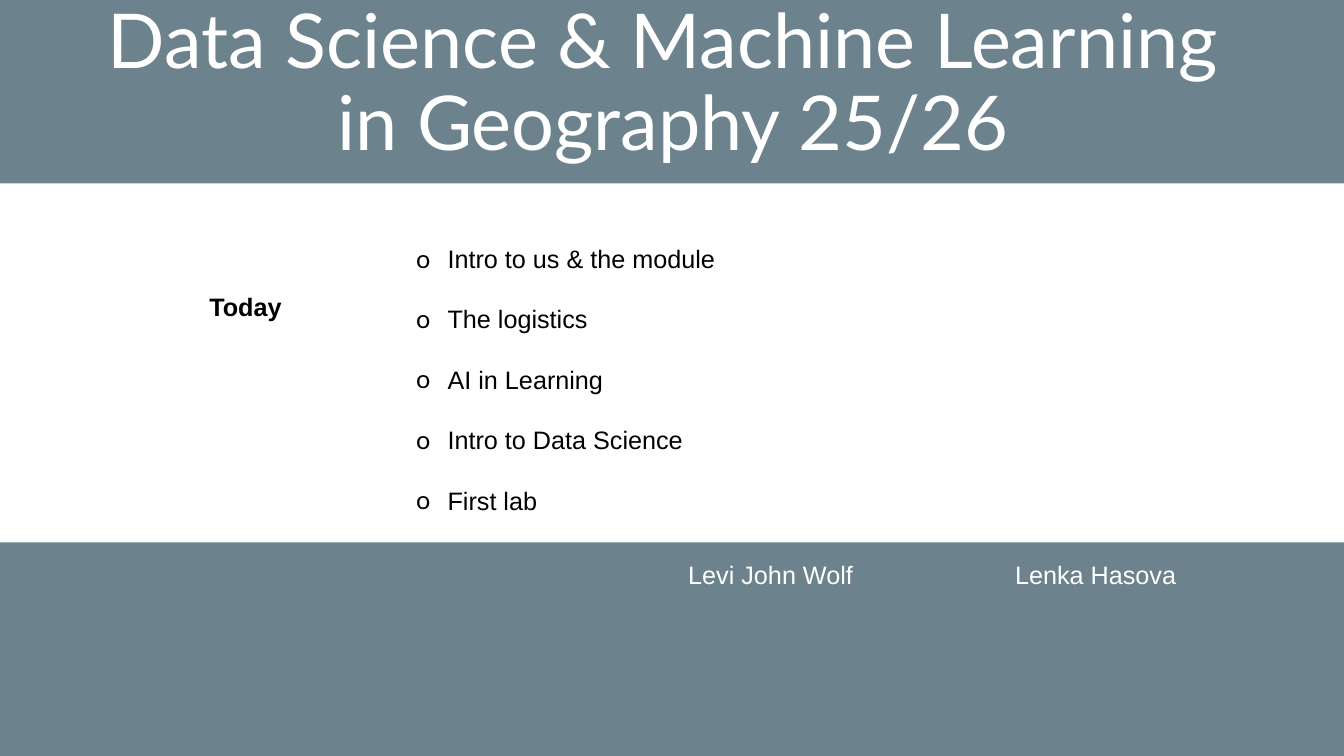
"""Build the opening slide of a data science module, with today's agenda."""
from lxml.etree import SubElement
from pptx import Presentation
from pptx.dml.color import RGBColor
from pptx.enum.shapes import MSO_SHAPE
from pptx.enum.text import MSO_ANCHOR, MSO_AUTO_SIZE, PP_ALIGN
from pptx.oxml.ns import qn
from pptx.util import Pt

NAVY = RGBColor(0x0B, 0x30, 0x41)
WHITE = RGBColor(0xFF, 0xFF, 0xFF)
BLACK = RGBColor(0x00, 0x00, 0x00)


def place(shape, left, top, width, height):
    shape.left, shape.top = Pt(left), Pt(top)
    shape.width, shape.height = Pt(width), Pt(height)


def add_span(para, text, font, size, color, bold=False):
    span = para.add_run()
    span.text = text
    span.font.name = font
    span.font.size = Pt(size)
    span.font.color.rgb = color
    span.font.bold = bold


deck = Presentation()
deck.slide_width, deck.slide_height = Pt(960), Pt(540)
page = deck.slides.add_slide(deck.slide_layouts[0])
title, agenda = page.placeholders

for position, (left, top, height) in enumerate([(-36, 387.5, 198.5), (-42.5, -9.5, 140.5)]):
    band = page.shapes.add_shape(
        MSO_SHAPE.RECTANGLE, Pt(left), Pt(top), Pt(1040.5), Pt(height))
    band.shadow.inherit = False
    band.line.fill.background()
    band.fill.solid()
    band.fill.fore_color.rgb = NAVY
    color = band.fill._xPr.find(qn("a:solidFill"))[0]
    SubElement(color, qn("a:alpha"), val="60000")
    page.shapes._spTree.insert(2 + position, band._element)

place(title, 12, 10, 937, 112.5)
title.text_frame.auto_size = MSO_AUTO_SIZE.NONE
title.text_frame.vertical_anchor = MSO_ANCHOR.BOTTOM
para = title.text_frame.paragraphs[0]
para.alignment = PP_ALIGN.CENTER
para.line_spacing = 0.9
add_span(para, "Data Science & Machine Learning ", "Lato", 54, WHITE)
para.add_line_break()
add_span(para, "in Geography 25/26", "Lato", 54, WHITE)

place(agenda, 290, 148.5, 345, 204)
frame = agenda.text_frame
frame.auto_size = MSO_AUTO_SIZE.SHAPE_TO_FIT_TEXT
frame.vertical_anchor = MSO_ANCHOR.TOP
topics = ["Intro to us & the module", "The logistics", "AI in Learning",
          "Intro to Data Science", "First lab"]
for number, topic in enumerate(topics):
    para = frame.add_paragraph() if number else frame.paragraphs[0]
    para.alignment = PP_ALIGN.LEFT
    para.line_spacing = 2.0
    para.space_before = Pt(0)
    properties = para._p.get_or_add_pPr()
    properties.set("marL", str(Pt(22.5)))
    properties.set("indent", str(Pt(-22.5)))
    bullet_color = SubElement(properties, qn("a:buClr"))
    SubElement(bullet_color, qn("a:srgbClr"), val=str(BLACK))
    SubElement(properties, qn("a:buFont"), typeface="Lato")
    SubElement(properties, qn("a:buChar"), char="o")
    add_span(para, topic, "Arial", 18, BLACK)

labels = [
    ("Levi John Wolf", 484.5, 396, 151, WHITE, False),
    ("Lenka Hasova", 718, 396, 204.5, WHITE, False),
    ("Today", 142.5, 204.5, 96.5, BLACK, True),
]
for text, left, top, width, color, bold in labels:
    box = page.shapes.add_textbox(Pt(left), Pt(top), Pt(width), Pt(29))
    box.text_frame.word_wrap = True
    box.text_frame.auto_size = MSO_AUTO_SIZE.SHAPE_TO_FIT_TEXT
    add_span(box.text_frame.paragraphs[0], text, "Arial", 18, color, bold)

deck.save("out.pptx")
